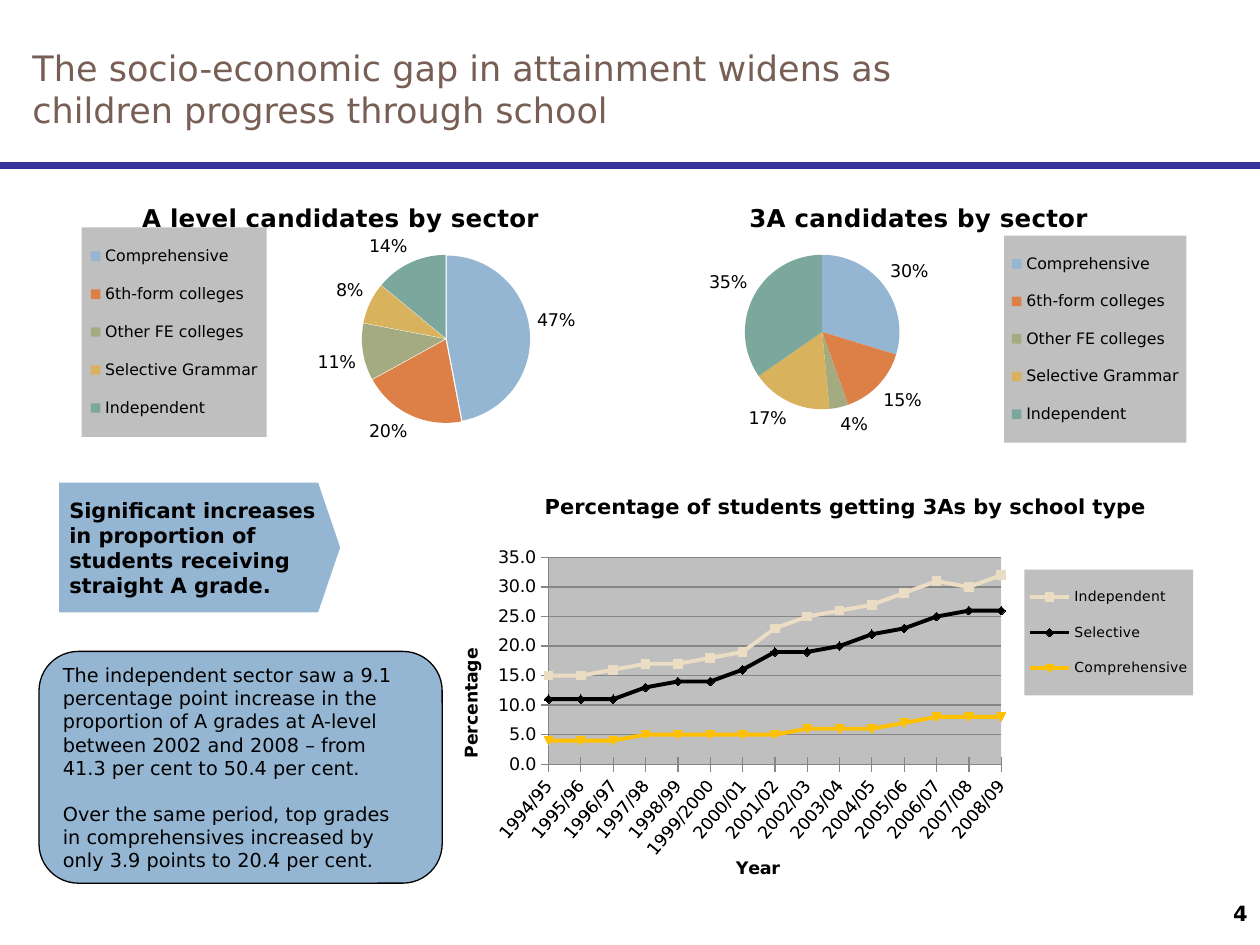
from lxml import etree
from pptx import Presentation
from pptx.chart.data import CategoryChartData
from pptx.dml.color import RGBColor
from pptx.enum.chart import (XL_CHART_TYPE, XL_LABEL_POSITION, XL_LEGEND_POSITION,
                             XL_MARKER_STYLE, XL_TICK_MARK)
from pptx.enum.shapes import MSO_CONNECTOR, MSO_SHAPE
from pptx.enum.text import MSO_ANCHOR, PP_ALIGN
from pptx.oxml import parse_xml
from pptx.oxml.ns import nsdecls, qn
from pptx.util import Inches, Pt

PIE, LINE = XL_CHART_TYPE.PIE, XL_CHART_TYPE.LINE_MARKERS
OUTER, RIGHT = XL_LABEL_POSITION.OUTSIDE_END, XL_LEGEND_POSITION.RIGHT
AUTO, CROSS = XL_MARKER_STYLE.AUTOMATIC, XL_TICK_MARK.CROSS
MIDDLE = MSO_ANCHOR.MIDDLE

BLACK = RGBColor(0x00, 0x00, 0x00)
BROWN = RGBColor(0x77, 0x5F, 0x55)
NAVY = RGBColor(0x33, 0x33, 0x99)
BLUE = RGBColor(0x94, 0xB6, 0xD2)
ORANGE = RGBColor(0xDD, 0x80, 0x47)
OLIVE = RGBColor(0xA5, 0xAB, 0x81)
GOLD = RGBColor(0xD8, 0xB2, 0x5C)
TEAL = RGBColor(0x7B, 0xA7, 0x9D)
CREAM = RGBColor(0xEB, 0xDD, 0xC3)
AMBER = RGBColor(0xFF, 0xC0, 0x00)
SILVER = RGBColor(0xBF, 0xBF, 0xBF)
GREY = RGBColor(0x86, 0x86, 0x86)
FONT = "DejaVu Sans"

deck = Presentation()
deck.slide_width, deck.slide_height = Inches(10), Inches(7.5)
COL, ROW = deck.slide_width / 100, deck.slide_height / 100
slide = deck.slides.add_slide(deck.slide_layouts[6])
shapes = slide.shapes


def box(x, y, w, h):
    return int(x * COL), int(y * ROW), int(w * COL), int(h * ROW)


def place(node, spot, *frame):
    for old in node.findall(qn("c:layout")):
        node.remove(old)
    layout = etree.Element(qn("c:layout"))
    manual = etree.SubElement(layout, qn("c:manualLayout"))
    parts = [("xMode", "edge"), ("yMode", "edge"), *zip("xywh", frame)]
    if spot == 0:
        parts.insert(0, ("layoutTarget", "inner"))
    for tag, val in parts:
        etree.SubElement(manual, qn("c:" + tag)).set("val", str(val))
    node.insert(spot, layout)


rule = shapes.add_connector(MSO_CONNECTOR.STRAIGHT, 0, int(17.5 * ROW),
                            int(100 * COL), int(17.5 * ROW))
rule.line.color.rgb = NAVY
rule.line.width = Pt(4)
etree.SubElement(rule._element.spPr, qn("a:effectLst"))

texts = [
    ("4", (79.2, 93.33, 20.8, 6.67), 12, BLACK, True, PP_ALIGN.RIGHT),
    ("The socio-economic gap in attainment widens as children progress through school",
     (1.6, 5.2, 79.7, 8.27), 20, BROWN, False, PP_ALIGN.LEFT),
]
for words, area, size, tint, bold, align in texts:
    frame = shapes.add_textbox(*box(*area)).text_frame
    frame.word_wrap = True
    frame.vertical_anchor = MIDDLE
    para = frame.paragraphs[0]
    para.text = words
    para.alignment = align
    font = para.font
    font.name, font.size, font.bold, font.color.rgb = FONT, Pt(size), bold, tint

sectors = ["Comprehensive", "6th-form colleges", "Other FE colleges",
           "Selective Grammar", "Independent"]
years = ["1994/95", "1995/96", "1996/97", "1997/98", "1998/99", "1999/2000", "2000/01",
         "2001/02", "2002/03", "2003/04", "2004/05", "2005/06", "2006/07", "2007/08", "2008/09"]
grades = {
    "Independent": [15, 15, 16, 17, 17, 18, 19, 23, 25, 26, 27, 29, 31, 30, 32],
    "Selective": [11, 11, 11, 13, 14, 14, 16, 19, 19, 20, 22, 23, 25, 26, 26],
    "Comprehensive": [4, 4, 4, 5, 5, 5, 5, 5, 6, 6, 6, 7, 8, 8, 8],
}
charts = [
    (PIE, "3A candidates by sector", 14, (50.8, 18.8, 43.8, 29.2), sectors,
     {"Series 1": [30, 15, 4, 17, 35]}, 9,
     (0.19, 0.07), (0.19, 0.28, 0.28, 0.56), (0.66, 0.21, 0.33, 0.75)),
    (PIE, "A level candidates by sector", 14, (4.7, 18.8, 44.5, 29.2), sectors,
     {"Series 1": [47, 20, 11, 8, 14]}, 9,
     (0.14, 0.07), (0.54, 0.28, 0.3, 0.61), (0.04, 0.18, 0.33, 0.76)),
    (LINE, "Percentage of students getting 3As by school type", 12,
     (34.4, 50, 60.9, 43.47), years, grades, 8,
     (0.14, 0.04), (0.15, 0.21, 0.59, 0.51), (0.77, 0.24, 0.22, 0.31)),
]
drawn = []
for kind, name, size, area, cats, rows, small, head, plot, key in charts:
    data = CategoryChartData()
    data.categories = cats
    for label, vals in rows.items():
        data.add_series(label, vals)
    chart = shapes.add_chart(kind, *box(*area), data).chart
    drawn.append(chart)
    font = chart.font
    font.name, font.size, font.color.rgb = FONT, Pt(10), BLACK
    chart.has_title = True
    title = chart.chart_title
    title.text_frame.text = name
    font = title.text_frame.paragraphs[0].font
    font.name, font.size, font.bold, font.color.rgb = FONT, Pt(size), True, BLACK
    place(title._element, 1, *head)
    chart.has_legend = True
    legend = chart.legend
    legend.position = RIGHT
    legend.include_in_layout = False
    legend.font.name, legend.font.size = FONT, Pt(small)
    legend.font.color.rgb = BLACK
    place(legend._element, 1, *key)
    ground = chart._chartSpace.chart.plotArea
    place(ground, 0, *plot)
    fill = (f'<c:spPr {nsdecls("c", "a")}><a:solidFill><a:srgbClr val="{SILVER}"/>'
            '</a:solidFill></c:spPr>')
    legend._element.find(qn("c:txPr")).addprevious(parse_xml(fill))
    if kind == LINE:
        ground.append(parse_xml(fill))

for chart, burst in zip(drawn[:2], (0, 1)):
    pie = chart.plots[0]
    pie.vary_by_categories = True
    ring = pie.series[0]
    if burst:
        gap = etree.Element(qn("c:explosion"))
        gap.set("val", str(burst))
        ring._element.find(qn("c:cat")).addprevious(gap)
    for i, tint in enumerate((BLUE, ORANGE, OLIVE, GOLD, TEAL)):
        slice_fill = ring.points[i].format.fill
        slice_fill.solid()
        slice_fill.fore_color.rgb = tint
    pie.has_data_labels = True
    labels = pie.data_labels
    labels.show_percentage, labels.show_value = True, False
    labels.number_format, labels.number_format_is_linked = "0%", False
    labels.position = OUTER

trend = drawn[2]
for line, tint in zip(trend.plots[0].series, (CREAM, BLACK, AMBER)):
    line.smooth = False
    line.format.line.color.rgb = tint
    line.format.line.width = Pt(2.25)
    mark = line.marker
    mark.style, mark.size = AUTO, 5
    mark.format.fill.solid()
    mark.format.fill.fore_color.rgb = tint
    mark.format.line.color.rgb = tint

across, up = trend.category_axis, trend.value_axis
for axis, name, spot in ((across, "Year", (0.39, 0.94)), (up, "Percentage", (0.03, 0.43))):
    axis.has_title = True
    axis.axis_title.text_frame.text = name
    font = axis.axis_title.text_frame.paragraphs[0].font
    font.name, font.size, font.bold, font.color.rgb = FONT, Pt(10), True, BLACK
    place(axis.axis_title._element, 1, *spot)
    axis.major_tick_mark = CROSS
    axis.format.line.color.rgb = GREY
    axis.tick_labels.font.size = Pt(10)
up.axis_title.text_frame._txBody.find(qn("a:bodyPr")).set("rot", "-5400000")
across._element.find(qn("c:txPr")).find(qn("a:bodyPr")).set("rot", "-3000000")
up.minimum_scale, up.maximum_scale, up.major_unit = 0, 35, 5
up.has_major_gridlines = True
up.major_gridlines.format.line.color.rgb = GREY
up.tick_labels.number_format = "0.0"
up.tick_labels.number_format_is_linked = False
between = etree.Element(qn("c:crossBetween"))
between.set("val", "midCat")
up._element.find(qn("c:majorUnit")).addprevious(between)

notes = [
    (MSO_SHAPE.PENTAGON, (4.7, 51.07, 22.3, 13.73), 0.17, (0.08, 0.05, 0.02, 0.05), 12, True,
     ["Significant increases in proportion of students receiving straight A grade."]),
    (MSO_SHAPE.ROUNDED_RECTANGLE, (3.1, 68.93, 32, 24.53), 0.17, (0.1, 0, 0.1, 0), 11, False,
     ["The independent sector saw a 9.1", "percentage point increase in the",
      "proportion of A grades at A-level", "between 2002 and 2008 – from",
      "41.3 per cent to 50.4 per cent.", "Over the same period, top grades",
      "in comprehensives increased by", "only 3.9 points to 20.4 per cent."]),
]
for kind, area, bend, pads, size, bold, lines in notes:
    note = shapes.add_shape(kind, *box(*area))
    note.shadow.inherit = False
    note.adjustments[0] = bend
    note.fill.solid()
    note.fill.fore_color.rgb = BLUE
    if bold:
        note.line.fill.background()
    else:
        note.line.color.rgb = BLACK
        note.line.width = Pt(0.75)
    frame = note.text_frame
    frame.word_wrap = True
    frame.vertical_anchor = MIDDLE
    (frame.margin_left, frame.margin_top,
     frame.margin_right, frame.margin_bottom) = map(Inches, pads)
    frame.text = "\n".join(lines)
    for para in frame.paragraphs:
        para.alignment = PP_ALIGN.LEFT
        font = para.font
        font.name, font.size, font.bold, font.color.rgb = FONT, Pt(size), bold, BLACK
        if para.text.startswith("Over"):
            para.space_before = Pt(13)

deck.save("out.pptx")
